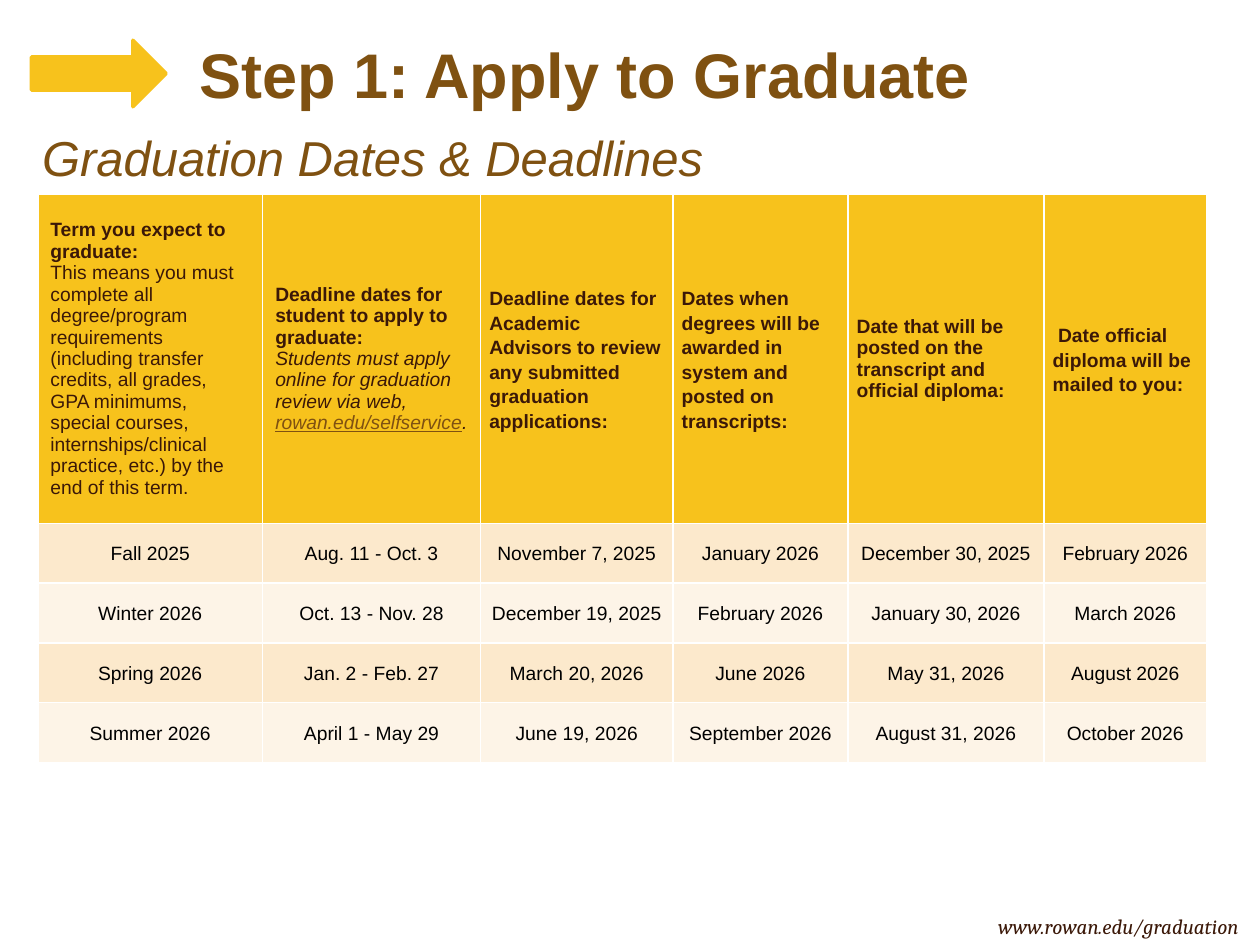
from pptx import Presentation
from pptx.util import Pt
from pptx.dml.color import RGBColor
from pptx.enum.shapes import MSO_SHAPE
from pptx.enum.text import MSO_ANCHOR, PP_ALIGN
from lxml.etree import SubElement
from pptx.oxml.ns import qn

# Content
TITLE = "Step 1: Apply to Graduate"
HEADING = "Graduation Dates & Deadlines"
SITE = "www.rowan.edu/graduation"
GOLD, BROWN, DARK = "F7C21C", "7F5111", "3B1808"
BANDS = ["FCE9CC", "FDF4E7"]

HEAD = dict(name="Arial", size=11, color=DARK, bold=True, italic=False)
PLAIN = HEAD | dict(bold=False)
NOTE = PLAIN | dict(italic=True)
LINK = NOTE | dict(color=BROWN, underline=True)
DATE = PLAIN | dict(color="000000")

# Each heading: side inset, top inset, line spacing, paragraphs of runs
HEADS = [
    (7.2, 3.6, 1, [
        [("Term you expect to graduate:", HEAD)],
        [("This means you must complete all degree/program requirements "
          "(including transfer credits, all grades, GPA minimums, special "
          "courses, internships/clinical practice, etc.) by the end of this "
          "term.", PLAIN)]]),
    (7.2, 3.6, 1, [
        [("Deadline dates for student to apply to graduate:", HEAD)],
        [("Students must apply online for graduation review via web, ", NOTE),
         ("rowan.edu/selfservice", LINK), (".", NOTE)]]),
    (5, 0, 1.15, [[("Deadline dates for Academic Advisors to review any "
                    "submitted graduation applications:", HEAD)]]),
    (5, 0, 1.15, [[("Dates when degrees will be awarded in system and "
                    "posted on transcripts:", HEAD)]]),
    (5, 0, 1, [[("Date that will be posted on the transcript and "
                 "official diploma:", HEAD)]]),
    (5, 0, 1.15, [[(" Date official diploma will be mailed to you:", HEAD)]]),
]
TERMS = [
    ("Fall 2025", "Aug. 11 - Oct. 3", "November 7, 2025",
     "January 2026", "December 30, 2025", "February 2026"),
    ("Winter 2026", "Oct. 13 - Nov. 28", "December 19, 2025",
     "February 2026", "January 30, 2026", "March 2026"),
    ("Spring 2026", "Jan. 2 - Feb. 27", "March 20, 2026",
     "June 2026", "May 31, 2026", "August 2026"),
    ("Summer 2026", "April 1 - May 29", "June 19, 2026",
     "September 2026", "August 31, 2026", "October 2026"),
]
WIDTHS = [128.5, 124.5, 110, 100, 112, 93]
TALL, LOW = 188, 34.2


def paint(target, code):
    """Give a fill or line a solid colour."""
    fill = getattr(target, "fill", target)
    fill.solid()
    fill.fore_color.rgb = RGBColor.from_string(code)


def style(font, form):
    for key, value in form.items():
        if key == "color":
            font.color.rgb = RGBColor.from_string(value)
        else:
            setattr(font, key, Pt(value) if key == "size" else value)


def write(frame, paras, align=PP_ALIGN.LEFT, gap=1):
    for i, runs in enumerate(paras):
        para = frame.add_paragraph() if i else frame.paragraphs[0]
        para.alignment, para.line_spacing = align, gap
        para.space_before = Pt(0)
        for text, form in runs:
            run = para.add_run()
            run.text = text
            style(run.font, form)


def place(shape, left, top, width, height, anchor=MSO_ANCHOR.TOP):
    shape.left, shape.top = Pt(left), Pt(top)
    shape.width, shape.height = Pt(width), Pt(height)
    frame = shape.text_frame
    frame.word_wrap, frame.vertical_anchor = True, anchor
    for side in ("left", "top", "right", "bottom"):
        setattr(frame, f"margin_{side}", 0)
    return frame


def fill_cell(cell, code, side, top, paras, align, gap):
    paint(cell, code)
    cell.vertical_anchor = MSO_ANCHOR.MIDDLE
    cell.margin_left = cell.margin_right = Pt(side)
    cell.margin_top = cell.margin_bottom = Pt(top)
    write(cell.text_frame, paras, align, gap)


deck = Presentation()
deck.slide_width, deck.slide_height = Pt(720), Pt(540)
slide = deck.slides.add_slide(deck.slide_layouts[1])
shapes = slide.shapes

# Title and heading
frame = place(shapes.title, 114, 18, 588, 48, MSO_ANCHOR.MIDDLE)
write(frame, [[(TITLE, dict(name="Arial", size=36, color=BROWN, bold=True))]])
frame = place(slide.placeholders[1], 24, 73, 678, 378)
props = frame.paragraphs[0]._p.get_or_add_pPr()
props.set("marL", "0")
props.set("indent", "0")
SubElement(props, qn("a:buNone"))
write(frame, [[(HEADING, dict(name="Arial", size=28, color=BROWN, italic=True))]])

# Web address
frame = place(shapes.add_textbox(0, 0, 0, 0), 498, 522, 210, 18)
write(frame, [[(SITE, dict(name="Cambria", size=12, color=DARK, italic=True))]],
      PP_ALIGN.RIGHT)

# Table of dates: the default style draws the white rules
table = shapes.add_table(
    len(TERMS) + 1, len(WIDTHS), Pt(21.6), Pt(111), Pt(sum(WIDTHS)),
    Pt(TALL + LOW * len(TERMS))).table
for col, width in zip(table.columns, WIDTHS):
    col.width = Pt(width)
for r, row in enumerate(table.rows):
    row.height = Pt(LOW if r else TALL)
for c, (side, top, gap, paras) in enumerate(HEADS):
    fill_cell(table.cell(0, c), GOLD, side, top, paras, PP_ALIGN.LEFT, gap)
for r, term in enumerate(TERMS):
    for c, text in enumerate(term):
        fill_cell(table.cell(r + 1, c), BANDS[r % 2], 5.5, 0,
                  [[(text, DATE)]], PP_ALIGN.CENTER, 1.07)

# Arrow beside the title
arrow = shapes.add_shape(MSO_SHAPE.RIGHT_ARROW, Pt(18), Pt(23), Pt(77), Pt(38))
arrow.shadow.inherit = False
paint(arrow, GOLD)
paint(arrow.line, GOLD)
arrow.line.width = Pt(2)

deck.save("out.pptx")
